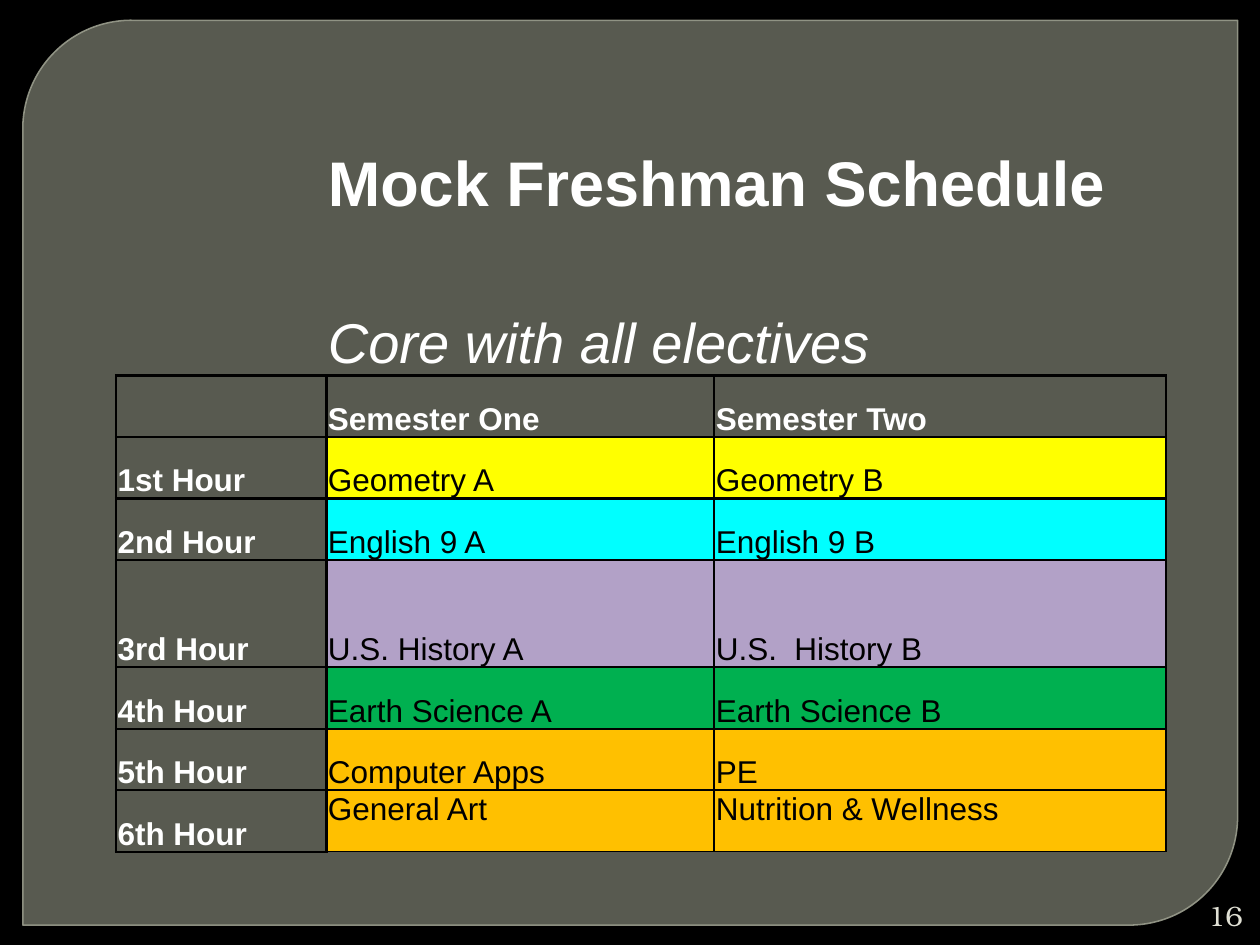
"""Build the mock freshman schedule slide."""
from dataclasses import dataclass

from lxml.etree import SubElement
from pptx import Presentation
from pptx.dml.color import RGBColor
from pptx.enum.shapes import MSO_SHAPE
from pptx.enum.text import MSO_ANCHOR, PP_ALIGN
from pptx.oxml.ns import qn
from pptx.slide import Slide
from pptx.table import Table, _Cell
from pptx.util import Cm, Pt

BLACK, WHITE = "000000", "FFFFFF"
NO_STYLE = "{2D5ABB26-0587-4C30-8999-92F81FD0307C}"
COLUMN_WIDTHS = (4.24, 7.82, 9.1)
TITLE_HEIGHT, SUBTITLE_HEIGHT, HOUR_HEIGHT, TALL_HEIGHT = 4.17, 1.7, 1.24, 2.16
GRID = {"lnL": 1.5, "lnR": 1.5, "lnT": 1.5, "lnB": 1.5}
LAST_GRID = GRID | {"lnB": 0.5}
HEADING = {"size": Pt(18), "bold": True}
COURSE = {"size": Pt(18), "bold": False}


@dataclass(frozen=True)
class Hour:
    """One hour of the school day with its two courses."""
    label: str
    first: str
    second: str
    color: str
    height: float = HOUR_HEIGHT


@dataclass(frozen=True)
class Banner:
    """One borderless line of text above the timetable."""
    text: str
    format: dict
    bottom_margin: float
    borders: dict


HOURS = (
    Hour("1st Hour", "Geometry A", "Geometry B", "FFFF00"),
    Hour("2nd Hour", "English 9 A", "English 9 B", "00FFFF"),
    Hour("3rd Hour", "U.S. History A", "U.S.  History B", "B2A1C7", TALL_HEIGHT),
    Hour("4th Hour", "Earth Science A", "Earth Science B", "00B050"),
    Hour("5th Hour", "Computer Apps", "PE", "FFC000"),
    Hour("6th Hour", "General Art", "Nutrition & Wellness", "FFC000"),
)
BANNERS = (
    Banner("Mock Freshman Schedule", {"size": Pt(36), "bold": True}, 1.43, {}),
    Banner("Core with all electives", {"size": Pt(32), "italic": True}, 0, {"lnB": 1.5}),
)


def paint(target, color: str, alpha: int = 100) -> None:
    """Give a fill a solid colour, with opacity in percent."""
    target.solid()
    target.fore_color.rgb = RGBColor.from_string(color)
    if alpha < 100:
        choice = target._xPr.find(qn("a:solidFill"))[0]
        SubElement(choice, qn("a:alpha"), val=str(alpha * 1000))


def write(frame, text: str, color: str, format_values: dict, face: str = "Arial") -> None:
    """Write one formatted run in a text frame."""
    run = frame.paragraphs[0].add_run()
    run.text = text
    for name, value in {"name": face, **format_values}.items():
        setattr(run.font, name, value)
    paint(run.font.fill, color)


def format_cell(cell: _Cell, borders: dict, fill: str = "", anchor=MSO_ANCHOR.BOTTOM,
                bottom_margin: float = 0) -> None:
    """Set the margins, borders and fill of a table cell."""
    values = {"margin_left": Cm(0.03), "margin_right": Cm(0.03), "margin_top": Cm(0.03),
              "margin_bottom": Cm(bottom_margin), "vertical_anchor": anchor}
    for name, value in values.items():
        setattr(cell, name, value)
    properties = cell._tc.get_or_add_tcPr()
    for side, width in borders.items():
        line = SubElement(properties, qn(f"a:{side}"), w=str(Pt(width)))
        SubElement(SubElement(line, qn("a:solidFill")), qn("a:srgbClr"), val=BLACK)
    if fill:
        paint(cell.fill, fill)
    else:
        cell.fill.background()


def add_panel(slide: Slide) -> None:
    """Draw the translucent panel with two rounded corners."""
    panel = slide.shapes.add_shape(MSO_SHAPE.ROUND_2_DIAG_RECTANGLE,
                                   Cm(0.46), Cm(0.41), Cm(24.49), Cm(18.24))
    panel.adjustments[0] = 0.12
    panel.shadow.inherit = False
    paint(panel.fill, "888B7B", 65)
    paint(panel.line.fill, "9DA090", 88)
    panel.line.width = Pt(0.87)


def add_slide_number(slide: Slide, number: str) -> None:
    """Write the slide number in the bottom right corner."""
    frame = slide.shapes.add_textbox(Cm(24), Cm(18.08), Cm(1.3), Cm(0.76)).text_frame
    frame.word_wrap = True
    frame.vertical_anchor = MSO_ANCHOR.MIDDLE
    frame.paragraphs[0].alignment = PP_ALIGN.RIGHT
    write(frame, number, "E0E0D4", {"size": Pt(16)}, "TeX Gyre Bonum")


def fill_banners(table: Table) -> None:
    """Fill the merged rows above the timetable."""
    for row, banner in enumerate(BANNERS):
        table.cell(row, 1).merge(table.cell(row, 2))
        for column in range(len(COLUMN_WIDTHS)):
            format_cell(table.cell(row, column), banner.borders,
                        bottom_margin=banner.bottom_margin)
        write(table.cell(row, 1).text_frame, banner.text, WHITE, banner.format)


def fill_timetable(table: Table) -> None:
    """Fill the semester headings and the hours below them."""
    first_row = len(BANNERS)
    for column, text in enumerate(("", "Semester One", "Semester Two")):
        cell = table.cell(first_row, column)
        format_cell(cell, GRID)
        if text:
            write(cell.text_frame, text, WHITE, HEADING)
    for row, hour in enumerate(HOURS, first_row + 1):
        label = table.cell(row, 0)
        format_cell(label, GRID)
        write(label.text_frame, hour.label, WHITE, HEADING)
        is_last = hour is HOURS[-1]
        for column, course in enumerate((hour.first, hour.second), 1):
            cell = table.cell(row, column)
            format_cell(cell, LAST_GRID if is_last else GRID, hour.color,
                        MSO_ANCHOR.TOP if is_last else MSO_ANCHOR.BOTTOM)
            write(cell.text_frame, course, BLACK, COURSE)


def add_schedule(slide: Slide) -> None:
    """Add the schedule table with its banner rows."""
    heights = (TITLE_HEIGHT, SUBTITLE_HEIGHT, HOUR_HEIGHT, *(hour.height for hour in HOURS))
    table = slide.shapes.add_table(len(heights), len(COLUMN_WIDTHS), Cm(2.34), Cm(1.7),
                                   Cm(sum(COLUMN_WIDTHS)), Cm(sum(heights))).table
    table._tbl.tblPr.find(qn("a:tableStyleId")).text = NO_STYLE
    for name in ("first_row", "horz_banding"):
        setattr(table, name, False)
    for column, width in zip(table.columns, COLUMN_WIDTHS):
        column.width = Cm(width)
    for row, height in zip(table.rows, heights):
        row.height = Cm(height)
    fill_banners(table)
    fill_timetable(table)


def main() -> None:
    """Build and save the presentation."""
    presentation = Presentation()
    presentation.slide_width, presentation.slide_height = Cm(25.4), Cm(19.05)
    slide = presentation.slides.add_slide(presentation.slide_layouts[6])
    paint(slide.background.fill, BLACK)
    add_panel(slide)
    add_slide_number(slide, "16")
    add_schedule(slide)
    presentation.save("out.pptx")


if __name__ == "__main__":
    main()
